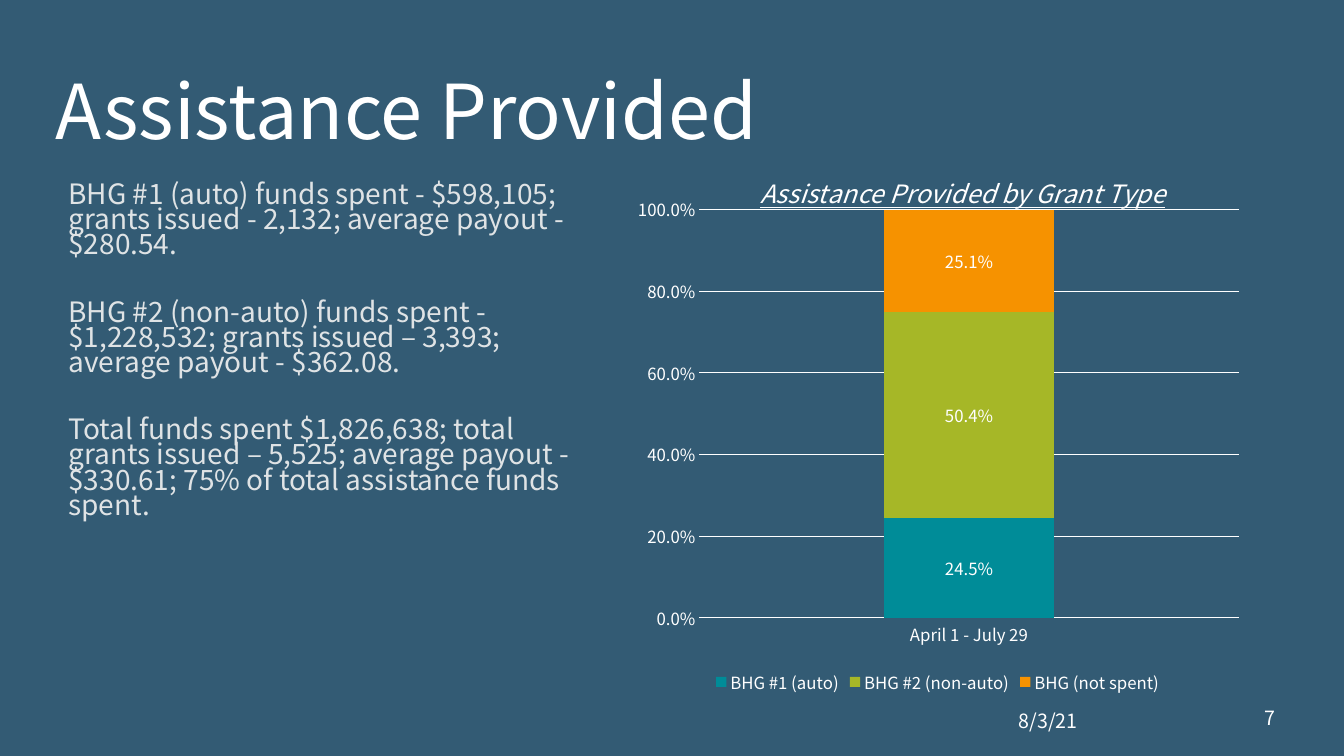
from lxml.etree import SubElement
from pptx import Presentation
from pptx.chart.data import CategoryChartData
from pptx.dml.color import RGBColor
from pptx.enum.chart import XL_CHART_TYPE, XL_LABEL_POSITION, XL_LEGEND_POSITION, XL_TICK_MARK
from pptx.enum.text import MSO_ANCHOR, MSO_AUTO_SIZE, PP_ALIGN
from pptx.oxml.ns import qn
from pptx.util import Inches, Pt

TITLE = "Assistance Provided"
FINDINGS = [
    "BHG #1 (auto) funds spent - $598,105; grants issued - 2,132; average payout - $280.54.",
    "BHG #2 (non-auto) funds spent - $1,228,532; grants issued – 3,393; average payout - $362.08.",
    "Total funds spent $1,826,638; total grants issued – 5,525; average payout - $330.61; "
    "75% of total assistance funds spent.",
]
DATE = "8/3/21"
PAGE_NUMBER = "7"
CHART_TITLE = "Assistance Provided by Grant Type"
PERIOD = "April 1 - July 29"
GRANT_SHARES = [
    ("BHG #1 (auto)", 0.245, "008C98"),
    ("BHG #2 (non-auto)", 0.504, "A6B727"),
    ("BHG (not spent)", 0.251, "F69200"),
]

THEME = {
    "font": "Noto Sans CJK JP",
    "background": "335B74",
    "white": "FFFFFF",
    "body": "DFE3E5",
    "title_size": 54,
    "body_size": 20,
    "chart_title_size": 18,
    "footer_size": 14,
    "label_size": 12,
}
PERCENT = "0.0%"


def color(name):
    return RGBColor.from_string(THEME.get(name, name))


def style_font(font, size, tint="white", **extras):
    values = {"name": THEME["font"], "size": Pt(THEME[size]), "bold": False, **extras}
    for attribute, value in values.items():
        setattr(font, attribute, value)
    font.color.rgb = color(tint)


def write_text(box, place, lines, size, tint="white", anchor=MSO_ANCHOR.TOP,
               align=PP_ALIGN.LEFT, spacing=1.0, gap=0):
    """Place a text shape and fill it, with gap points between paragraphs."""
    box.left, box.top, box.width, box.height = map(Inches, place)
    frame = box.text_frame
    settings = {"word_wrap": True, "auto_size": MSO_AUTO_SIZE.NONE, "vertical_anchor": anchor}
    for attribute, value in settings.items():
        setattr(frame, attribute, value)
    for index, line in enumerate(lines):
        para = frame.add_paragraph() if index else frame.paragraphs[0]
        para.alignment = align
        para.line_spacing = spacing
        para.space_before = Pt(gap if index else 0)
        span = para.add_run()
        span.text = line
        style_font(span.font, size, tint)


def set_layout(parent, **fractions):
    """Fix a chart part's place, in fractions of the chart's size."""
    layout = parent.find(qn("c:layout"))
    if layout is None:
        layout = SubElement(parent, qn("c:layout"))
        if parent.tag == qn("c:plotArea"):
            parent.insert(0, layout)
        else:
            parent.find(qn("c:tx")).addnext(layout)
    manual = SubElement(layout, qn("c:manualLayout"))
    if "w" in fractions:
        SubElement(manual, qn("c:layoutTarget"), val="inner")
    for side in ("x", "y"):
        SubElement(manual, qn(f"c:{side}Mode"), val="edge")
    for side, value in fractions.items():
        SubElement(manual, qn(f"c:{side}"), val=str(value))


def style_line(line):
    line.color.rgb = color("white")
    line.width = Pt(0.75)


def add_grant_chart(page):
    data = CategoryChartData(number_format=PERCENT)
    data.categories = [PERIOD]
    for name, share, _ in GRANT_SHARES:
        data.add_series(name, [share])
    place = map(Inches, (6.19, 1.6, 6.22, 5.33))
    chart = page.shapes.add_chart(XL_CHART_TYPE.COLUMN_STACKED, *place, data).chart
    style_font(chart.font, "label_size")

    chart.has_title = True
    para = chart.chart_title.text_frame.paragraphs[0]
    span = para.add_run()
    span.text = CHART_TITLE
    style_font(span.font, "chart_title_size", italic=True, underline=True)
    chart.chart_title.include_in_layout = False
    set_layout(chart.chart_title._element, x=0.21, y=0.01)
    set_layout(chart._chartSpace.chart.plotArea, x=0.12, y=0.09, w=0.86, h=0.76)

    chart.has_legend = True
    chart.legend.position = XL_LEGEND_POSITION.BOTTOM
    chart.legend.include_in_layout = False
    style_font(chart.legend.font, "label_size")

    for axis in (chart.category_axis, chart.value_axis):
        axis.major_tick_mark = axis.minor_tick_mark = XL_TICK_MARK.NONE
        style_font(axis.tick_labels.font, "label_size")
    style_line(chart.category_axis.format.line)
    scale = chart.value_axis
    scale.minimum_scale, scale.maximum_scale, scale.major_unit = 0, 1, 0.2
    scale.format.line.fill.background()
    scale.tick_labels.number_format = PERCENT
    scale.tick_labels.number_format_is_linked = False
    style_line(scale.major_gridlines.format.line)

    plot = chart.plots[0]
    plot.gap_width, plot.overlap, plot.vary_by_categories = 219, 100, False
    for series, (_, _, tint) in zip(plot.series, GRANT_SHARES):
        series.format.fill.solid()
        series.format.fill.fore_color.rgb = color(tint)
        labels = series.data_labels
        settings = {"show_value": True, "number_format": PERCENT,
                    "number_format_is_linked": False, "position": XL_LABEL_POSITION.CENTER}
        for attribute, value in settings.items():
            setattr(labels, attribute, value)
        style_font(labels.font, "label_size")


def main():
    deck = Presentation()
    deck.slide_width, deck.slide_height = Inches(13.33), Inches(7.5)
    page = deck.slides.add_slide(deck.slide_layouts[5])
    page.background.fill.solid()
    page.background.fill.fore_color.rgb = color("background")

    write_text(page.shapes.title, (0.45, 0.15, 12.3, 1.45), [TITLE], "title_size",
               anchor=MSO_ANCHOR.BOTTOM, spacing=0.9)
    add_grant_chart(page)
    text_boxes = [
        ((0.58, 1.78, 5.28, 4.88), FINDINGS, "body_size",
         {"tint": "body", "spacing": 0.75, "gap": 30}),
        ((9.12, 6.95, 2.55, 0.4), [DATE], "footer_size",
         {"anchor": MSO_ANCHOR.MIDDLE, "align": PP_ALIGN.CENTER}),
        ((11.8, 6.95, 0.95, 0.4), [PAGE_NUMBER], "footer_size", {"align": PP_ALIGN.RIGHT}),
    ]
    for place, lines, size, options in text_boxes:
        box = page.shapes.add_textbox(0, 0, 0, 0)
        write_text(box, place, lines, size, **options)
    deck.save("out.pptx")


if __name__ == "__main__":
    main()
